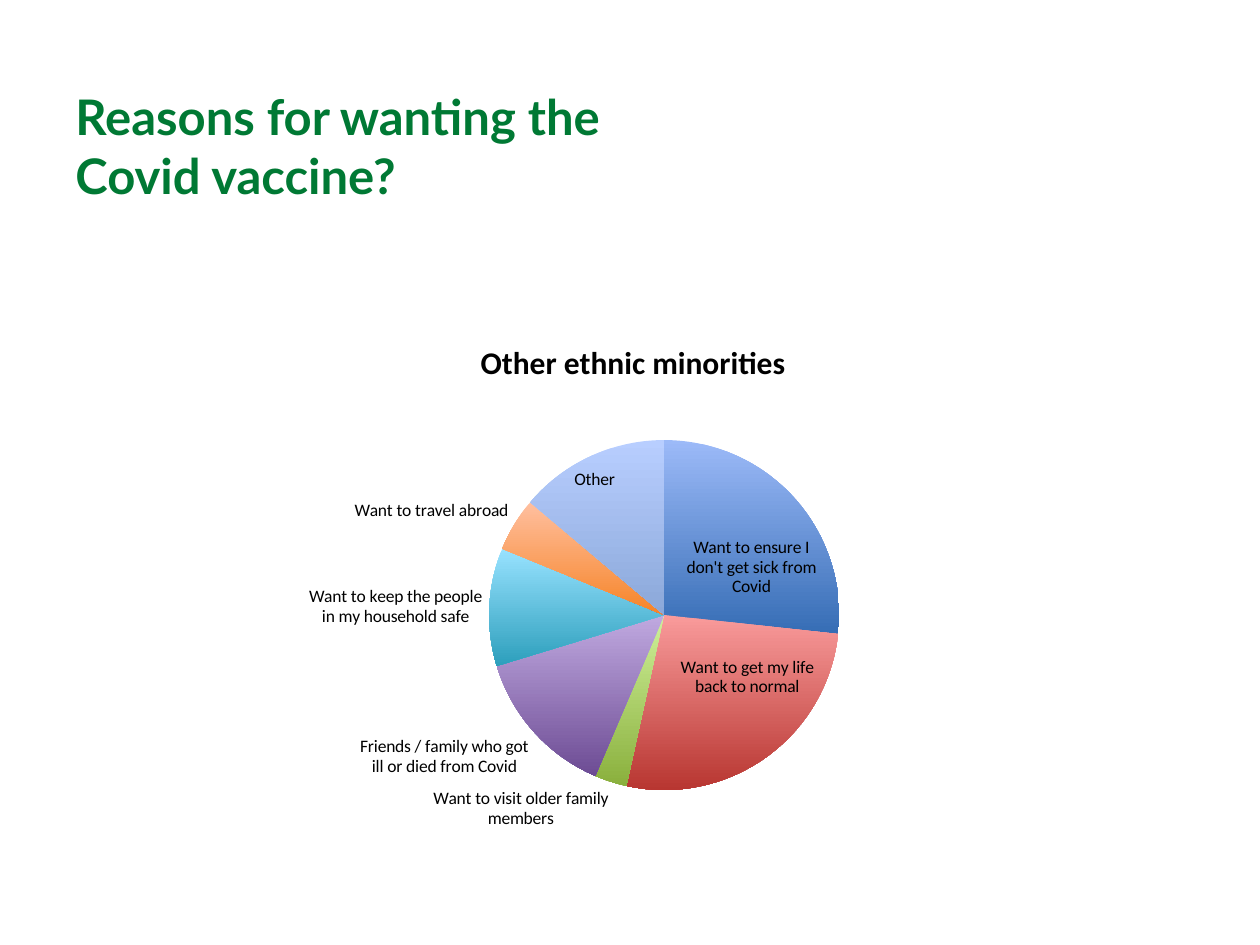
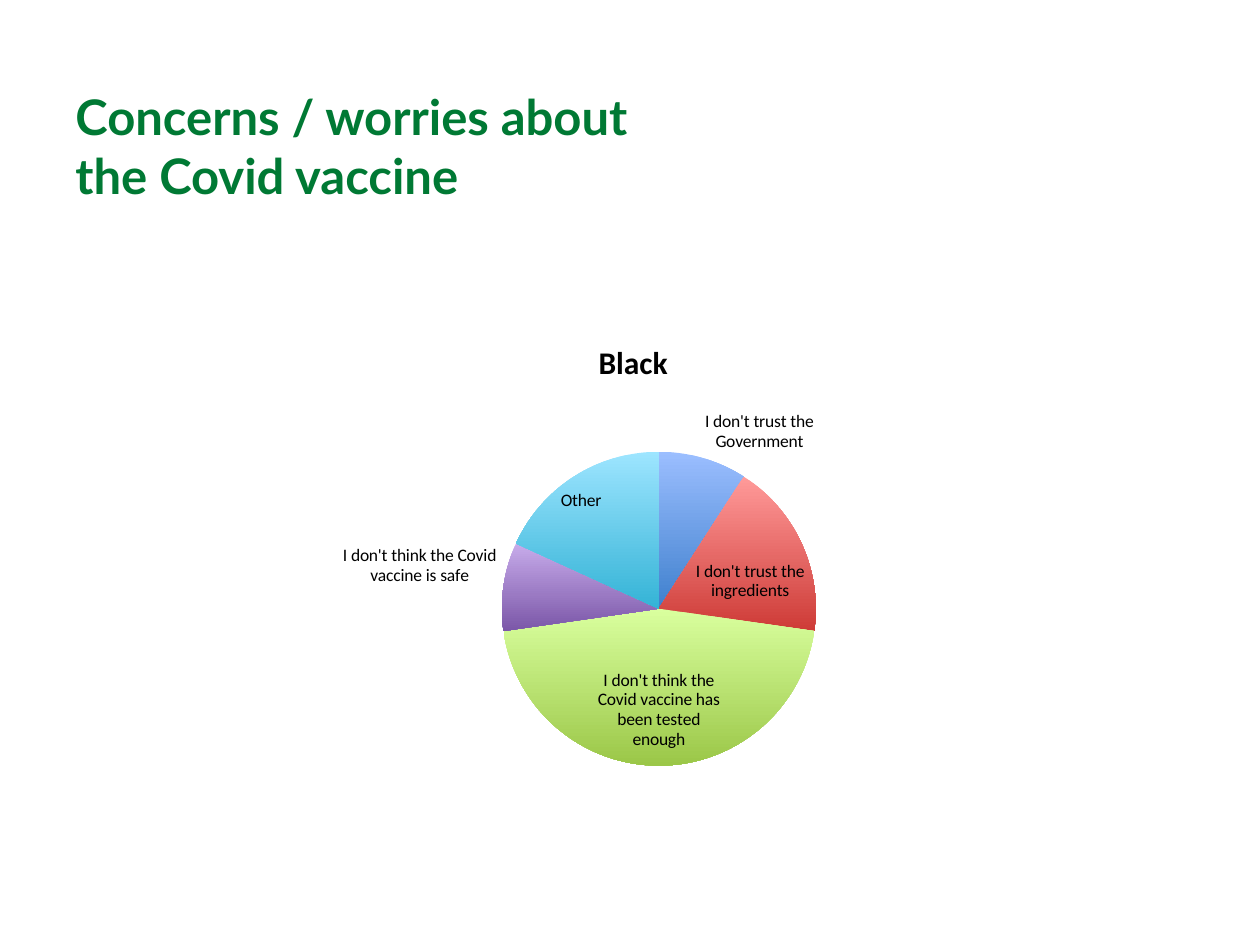
"""Build two slides of pie charts on attitudes to the Covid vaccine."""
from dataclasses import dataclass

from lxml import etree
from pptx import Presentation
from pptx import util as u
from pptx.chart import data as chart_data
from pptx.dml import color
from pptx.enum import chart as chart_enum
from pptx.oxml import ns

COLORS = {
    "heading": "007934",
    "text": "000000",
    "blue_top": "9BBEFF", "blue": "3F80CD",
    "red_top": "FF9A99", "red": "CE3B37",
    "green_top": "D9FF9E", "green": "9BC748",
    "purple_top": "C7ABEA", "purple": "7B57A8",
    "cyan_top": "9DE5FF", "cyan": "34B3D6",
    "deep_blue_top": "9CBAF8", "deep_blue": "366DB5",
    "deep_red_top": "F99B9B", "deep_red": "B83631",
    "deep_green_top": "CFF09A", "deep_green": "8AB03D",
    "deep_purple_top": "C0A9E0", "deep_purple": "6D4C94",
    "deep_cyan_top": "98E2FF", "deep_cyan": "2D9FBC",
    "orange_top": "FFBF9F", "orange": "F68427",
    "pale_blue_top": "B8CEFF", "pale_blue": "8BA8D9",
}
HEADING_FONT = "Lato"
CHART_FONT = "Calibri"


@dataclass(frozen=True)
class Slice:
    reason: str
    percent: int
    shade: str
    label_outside: bool = False


@dataclass(frozen=True)
class Survey:
    heading: str
    group: str
    chart_height: float
    pie_area: tuple[float, float, float, float]
    slices: tuple[Slice, ...]


SURVEYS = (
    Survey("Reasons for wanting the\vCovid vaccine?", "Other ethnic minorities",
           4.21, (0.338, 0.231, 0.394, 0.66), (
               Slice("Want to ensure I don't get sick from Covid", 27, "deep_blue"),
               Slice("Want to get my life back to normal", 27, "deep_red"),
               Slice("Want to visit older family members", 3, "deep_green", True),
               Slice("Friends / family who got ill or died from Covid", 14,
                     "deep_purple", True),
               Slice("Want to keep the people in my household safe", 11, "deep_cyan"),
               Slice("Want to travel abroad", 5, "orange"),
               Slice("Other", 14, "pale_blue"))),
    Survey("Concerns / worries about\vthe Covid vaccine", "Black",
           4.23, (0.352, 0.252, 0.354, 0.589), (
               Slice("I don't trust the Government", 9, "blue"),
               Slice("I don't trust the ingredients", 18, "red"),
               Slice("I don't think the Covid vaccine has been tested enough", 45,
                     "green"),
               Slice("I don't think the Covid vaccine is safe", 9, "purple"),
               Slice("Other", 18, "cyan"))),
)


def rgb(name: str) -> color.RGBColor:
    """Return a palette colour."""
    return color.RGBColor.from_string(COLORS[name])


def write(frame, words: str, *, size: float, font: str, ink: str = "text",
          bold: bool = False) -> None:
    """Fill a text frame with one formatted paragraph."""
    frame.text = words
    for run in frame.paragraphs[0].runs:
        run.font.size = u.Pt(size)
        run.font.name = font
        run.font.bold = bold
        run.font.color.rgb = rgb(ink)


def place_plot(plot_area, area: tuple[float, float, float, float]) -> None:
    """Fix the inner plot area as fractions of the chart."""
    for old in plot_area.findall(ns.qn("c:layout")):
        plot_area.remove(old)
    layout = etree.Element(ns.qn("c:layout"))
    plot_area.insert(0, layout)
    manual = etree.SubElement(layout, ns.qn("c:manualLayout"))
    settings = (("layoutTarget", "inner"), ("xMode", "edge"), ("yMode", "edge"),
                *zip("xywh", map(str, area)))
    for tag, value in settings:
        etree.SubElement(manual, ns.qn(f"c:{tag}")).set("val", value)


def shade_slice(point, shade: str) -> None:
    """Shade a slice from light at the top to dark at the bottom."""
    point.format.line.fill.background()
    fill = point.format.fill
    fill.gradient()
    fill.gradient_angle = 270
    for stop, name in zip(fill.gradient_stops, (f"{shade}_top", shade)):
        stop.color.rgb = rgb(name)


def label_slices(series, slices: tuple[Slice, ...]) -> None:
    """Label each slice with its reason."""
    labels = series.data_labels
    labels.show_value = False
    labels.show_category_name = True
    labels.position = chart_enum.XL_LABEL_POSITION.BEST_FIT
    for point, part in zip(series.points, slices):
        if part.label_outside:
            point.data_label.position = chart_enum.XL_LABEL_POSITION.OUTSIDE_END
    for label in series._element.iter(ns.qn("c:dLbl")):
        label.find(ns.qn("c:showVal")).set("val", "0")
        label.find(ns.qn("c:showCatName")).set("val", "1")


def add_pie(slide, survey: Survey) -> None:
    """Add the pie chart of a survey."""
    answers = chart_data.CategoryChartData()
    answers.categories = [part.reason for part in survey.slices]
    answers.add_series("Series 1", [part.percent for part in survey.slices])
    pie = slide.shapes.add_chart(
        chart_enum.XL_CHART_TYPE.PIE, u.Inches(1.5), u.Inches(2.52),
        u.Inches(7.05), u.Inches(survey.chart_height), answers).chart
    pie.has_legend = False
    pie.font.size = u.Pt(10)
    pie.font.name = CHART_FONT
    pie.font.color.rgb = rgb("text")
    write(pie.chart_title.text_frame, survey.group, size=18, font=CHART_FONT, bold=True)
    pie.chart_title.include_in_layout = False
    plot = pie.plots[0]
    plot.vary_by_categories = True
    series = plot.series[0]
    for point, part in zip(series.points, survey.slices):
        shade_slice(point, part.shade)
    label_slices(series, survey.slices)
    place_plot(plot._element.getparent(), survey.pie_area)


def add_survey(deck, survey: Survey) -> None:
    """Add a slide with the heading and chart of a survey."""
    slide = deck.slides.add_slide(deck.slide_layouts[6])
    heading = slide.shapes.add_textbox(
        u.Inches(0.5), u.Inches(0.64), u.Inches(8.55), u.Inches(1.88)).text_frame
    heading.word_wrap = True
    write(heading, survey.heading, size=28, font=HEADING_FONT, ink="heading", bold=True)
    add_pie(slide, survey)


def main() -> None:
    """Build and save the deck."""
    deck = Presentation()
    deck.slide_width = u.Inches(10)
    deck.slide_height = u.Inches(7.5)
    for survey in SURVEYS:
        add_survey(deck, survey)
    deck.save("out.pptx")


if __name__ == "__main__":
    main()
